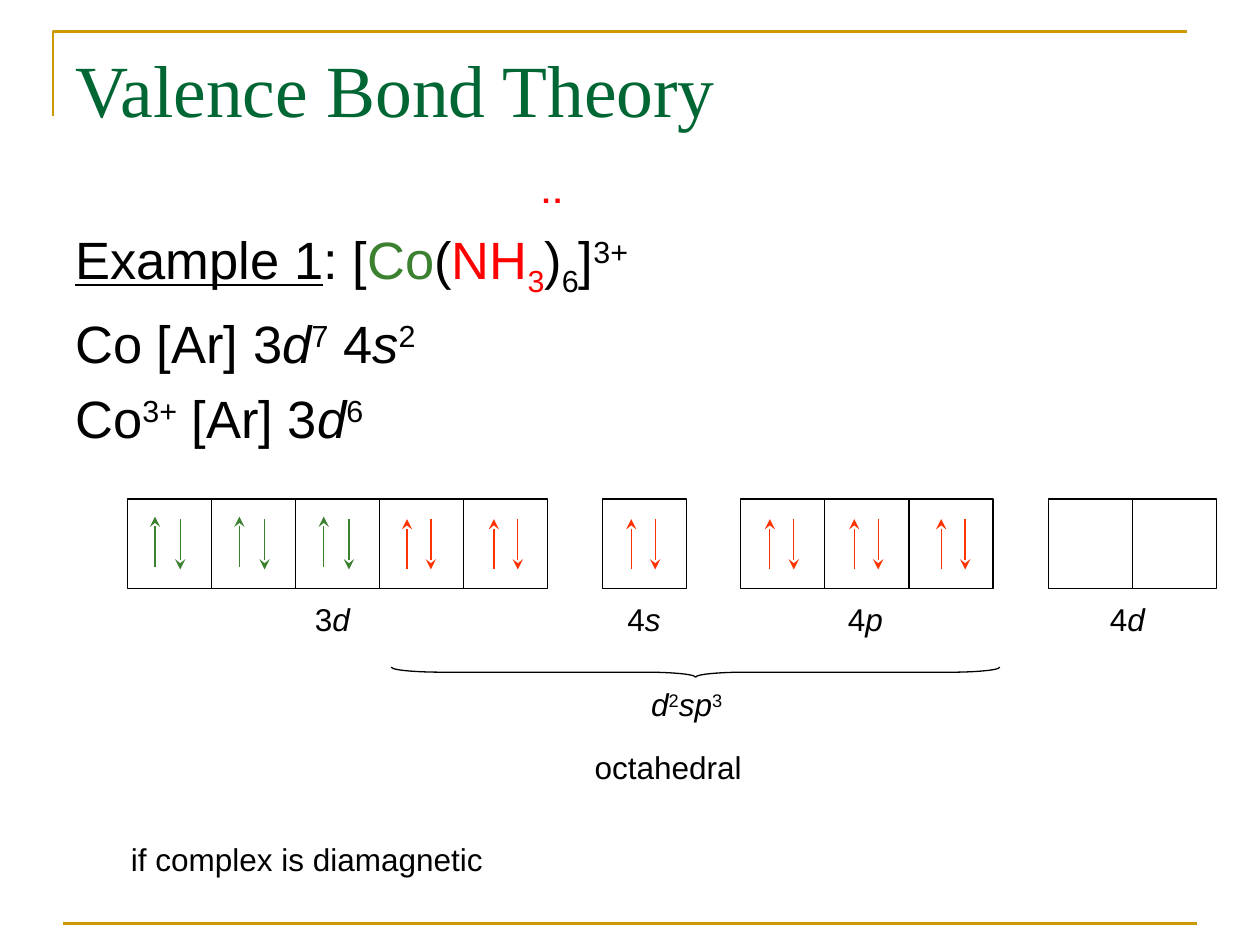
from dataclasses import dataclass

from lxml.etree import SubElement
from pptx import Presentation
from pptx.dml.color import RGBColor
from pptx.enum.shapes import MSO_CONNECTOR as CONN, MSO_SHAPE as SHAPE
from pptx.enum.text import MSO_ANCHOR, MSO_AUTO_SIZE as AUTO, PP_ALIGN
from pptx.oxml.ns import qn
from pptx.util import Inches, Pt


@dataclass
class Theme:
    gold: str = "CC9900"
    title: str = "006633"
    text: str = "000000"
    metal: str = "3B812F"
    ligand: str = "FF0000"
    bonding: str = "FF3300"
    title_size: int = 42
    body_size: int = 30
    label_size: int = 18
    title_font: str = "Times New Roman"
    font: str = "Arial"


theme = Theme()
SUB, SUP = {"base": -25}, {"base": 30}
ITALIC = {"italic": True}


def write(p, text, size=theme.label_size, color=theme.text, font=theme.font,
          italic=False, bold=False, underline=False, base=0):
    """Add one formatted run to a paragraph; base is the baseline shift in percent."""
    r = p.add_run()
    r.text = text
    f = r.font
    f.size, f.name = Pt(size), font
    f.italic, f.bold, f.underline = italic, bold, underline
    f.color.rgb = RGBColor.from_string(color)
    if base:
        f._element.set("baseline", str(base * 1000))


def draw_line(x1, y1, x2, y2, color, width=0.75, arrow=False):
    """Draw a straight line, with a stealth head at its end if asked."""
    c = s.shapes.add_connector(CONN.STRAIGHT, Inches(x1), Inches(y1), Inches(x2), Inches(y2))
    c.line.color.rgb = RGBColor.from_string(color)
    c.line.width = Pt(width)
    if arrow:
        SubElement(c.line._get_or_add_ln(), qn("a:tailEnd"), type="stealth")
    SubElement(c._element.spPr, qn("a:effectLst"))


prs = Presentation()
prs.slide_width, prs.slide_height = Inches(10), Inches(7.5)
s = prs.slides.add_slide(prs.slide_layouts[5])

# Frame: corner at the top, rule at the bottom
fb = s.shapes.build_freeform(Inches(0.42), Inches(0.92), scale=1.0)
fb.add_line_segments([(Inches(0.42), Inches(0.25)), (Inches(9.42), Inches(0.25))], close=False)
corner = fb.convert_to_shape()
corner.fill.background()
corner.line.color.rgb = RGBColor.from_string(theme.gold)
corner.line.width = Pt(1.5)
corner.shadow.inherit = False
draw_line(0.5, 7.33, 9.5, 7.33, theme.gold, 1.5)

# Title
title = s.shapes.title
title.left, title.top, title.width, title.height = map(Inches, (0.5, 0.3, 9, 1.25))
tf = title.text_frame
tf.vertical_anchor = MSO_ANCHOR.TOP
tf.auto_size = AUTO.NONE
p = tf.paragraphs[0]
p.alignment = PP_ALIGN.LEFT
write(p, "Valence Bond Theory", theme.title_size, theme.title, theme.title_font)

# Electron configurations
configurations = [
    [("Example 1", {"underline": True}), (": [", {}), ("Co", {"color": theme.metal}),
     ("(", {}), ("NH", {"color": theme.ligand}), ("3", {"color": theme.ligand, **SUB}),
     (")", {}), ("6", SUB), ("]", {}), ("3+", SUP)],
    [("Co [Ar] 3", {}), ("d", ITALIC), ("7", SUP), (" 4", {}), ("s", ITALIC), ("2", SUP)],
    [("Co", {}), ("3+", SUP), (" [Ar] 3", {}), ("d", ITALIC), ("6", SUP)],
]
body = s.shapes.add_textbox(Inches(0.5), Inches(1.75), Inches(9), Inches(4.95))
tf = body.text_frame
tf.word_wrap = True
for i, runs in enumerate(configurations):
    p = tf.paragraphs[0] if i == 0 else tf.add_paragraph()
    if i:
        p.space_before = Pt(7)
    for text, style in runs:
        write(p, text, theme.body_size, **style)

# Orbital boxes: left edge and number of cells of each subshell
CELL_W, CELL_H, CELL_TOP = 0.667, 0.71, 3.96
for left, count in [(1.01, 5), (4.78, 1), (5.88, 3), (8.32, 2)]:
    for i in range(count):
        sp = s.shapes.add_shape(SHAPE.RECTANGLE, Inches(left + i * CELL_W), Inches(CELL_TOP),
                                Inches(CELL_W), Inches(CELL_H))
        sp.fill.background()
        sp.line.color.rgb = RGBColor.from_string(theme.text)
        sp.line.width = Pt(0.75)
        sp.shadow.inherit = False

# Electron pairs: spin up on the left, spin down on the right
ARROW_TOP, ARROW_LEN = 4.12, 0.4
for color, lift, gap, ups in [
    (theme.metal, 0.02, 0.2, (1.23, 1.9, 2.57)),
    (theme.bonding, 0, 0.19, (3.23, 3.92, 5.01, 6.11, 6.78, 7.47)),
]:
    for x in ups:
        draw_line(x, ARROW_TOP + ARROW_LEN - lift, x, ARROW_TOP - lift, color, arrow=True)
        draw_line(x + gap, ARROW_TOP, x + gap, ARROW_TOP + ARROW_LEN, color, arrow=True)

# Brace over the hybridised orbitals
brace = s.shapes.add_shape(SHAPE.RIGHT_BRACE, Inches(5.48), Inches(2.92), Inches(0.08), Inches(4.83))
brace.rotation = 90
brace.adjustments[0], brace.adjustments[1] = 4.94, 0.5
brace.fill.background()
brace.line.color.rgb = RGBColor.from_string(theme.text)
brace.line.width = Pt(0.75)
brace.shadow.inherit = False

# Labels
labels = [
    (2.4, 4.71, 0.75, [("3", {}), ("d", ITALIC)]),
    (4.88, 4.71, 0.75, [("4", {}), ("s", ITALIC)]),
    (6.63, 4.71, 0.75, [("4", {}), ("p", ITALIC)]),
    (8.71, 4.71, 0.75, [("4", {}), ("d", ITALIC)]),
    (5.07, 5.39, 1.77, [("d", ITALIC), ("2", SUP), ("sp", ITALIC), ("3", SUP)]),
    (4.62, 5.89, 1.89, [("octahedral", {})]),
    (0.94, 6.62, 4.52, [("if complex is diamagnetic", {})]),
]
for left, top, width, runs in labels:
    box = s.shapes.add_textbox(Inches(left), Inches(top), Inches(width), Inches(0.5))
    tf = box.text_frame
    tf.word_wrap = True
    tf.auto_size = AUTO.SHAPE_TO_FIT_TEXT
    for text, style in runs:
        write(tf.paragraphs[0], text, **style)

# Lone pair above the nitrogen: a colon turned on its side
lone_pair = s.shapes.add_textbox(Inches(4.24), Inches(1.33), Inches(0.31), Inches(0.5))
lone_pair.rotation = 270
tf = lone_pair.text_frame
tf.word_wrap = False
tf.auto_size = AUTO.SHAPE_TO_FIT_TEXT
write(tf.paragraphs[0], ":", color=theme.ligand, bold=True)

prs.save("out.pptx")
